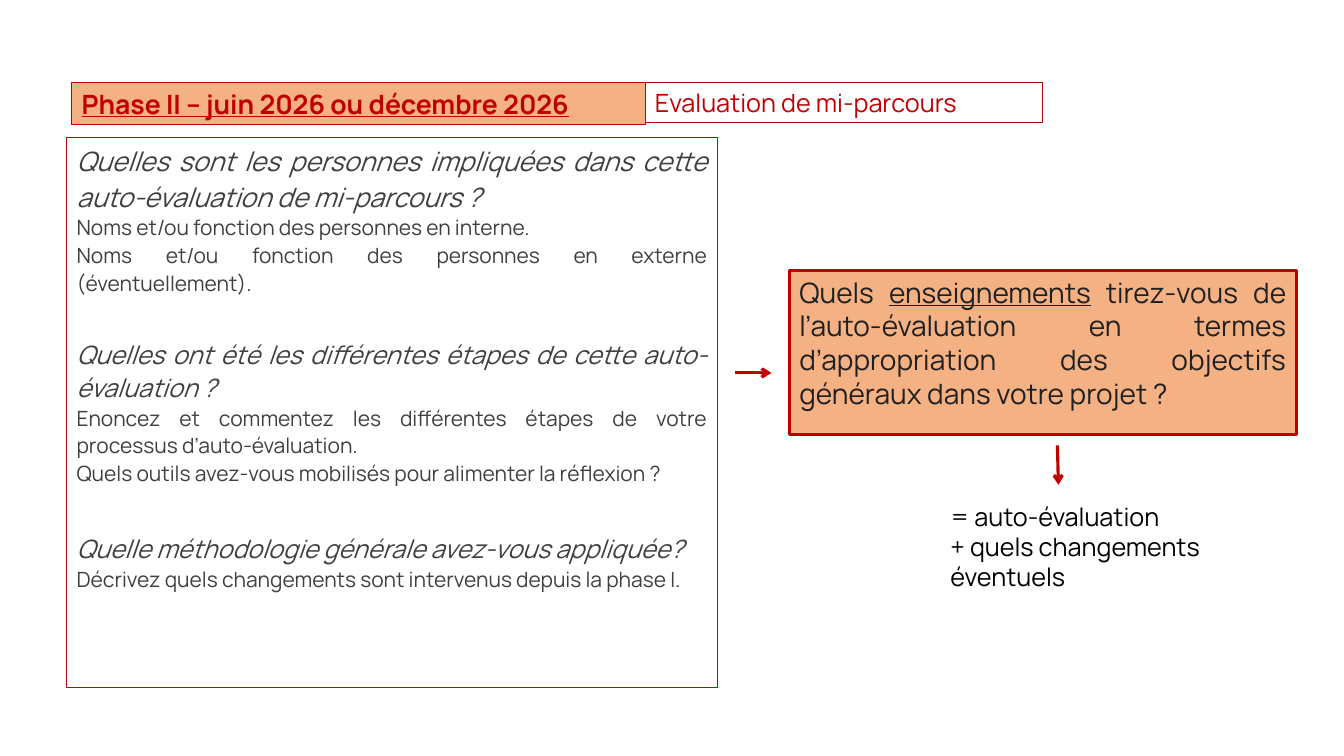
from lxml import etree
from pptx import Presentation
from pptx import util as u
from pptx.dml.color import RGBColor
from pptx.enum import shapes, text
from pptx.oxml import ns

Pt = u.Pt
RED = RGBColor(0xC0, 0x00, 0x00)
ORANGE = RGBColor(0xF4, 0xB1, 0x83)
GREY = RGBColor(0x40, 0x40, 0x40)
DARK = RGBColor(0x20, 0x20, 0x20)
BLACK = RGBColor(0x00, 0x00, 0x00)
FONT = "Manrope"
LEFT, JUSTIFY = text.PP_ALIGN.LEFT, text.PP_ALIGN.JUSTIFY

QUESTIONS = [
    (0, 19, "Quelles sont les personnes impliquées dans cette auto-évaluation de mi-parcours\u00a0?",
     ["Noms et/ou fonction des personnes en interne.",
      "Noms et/ou fonction des personnes en externe (éventuellement)."]),
    (29, 18, "Quelles ont été les différentes étapes de cette auto-évaluation\u00a0?",
     ["Enoncez et commentez les différentes étapes de votre processus d’auto-évaluation.",
      "Quels outils avez-vous mobilisés pour alimenter la réflexion\u00a0?"]),
    (32, 18, "Quelle méthodologie générale avez-vous appliquée?",
     ["Décrivez quels changements sont intervenus depuis la phase I."]),
]


def place(shape, box, fill=None, line_width=None):
    """Move a shape to its box, style its frame and return its text frame."""
    shape.left, shape.top, shape.width, shape.height = (Pt(value) for value in box)
    if fill is not None:
        shape.fill.solid()
        shape.fill.fore_color.rgb = fill
    if line_width:
        shape.line.color.rgb = RED
        shape.line.width = Pt(line_width)
    frame = shape.text_frame
    frame.word_wrap = True
    frame.auto_size = text.MSO_AUTO_SIZE.NONE
    frame.vertical_anchor = text.MSO_ANCHOR.TOP
    return frame


def write(frame, runs, size, color, align=LEFT, before=0, spacing=1.0, italic=False):
    """Add one unbulleted paragraph made of (text, bold, underline) runs."""
    paragraph = frame.paragraphs[0]
    if paragraph.runs:
        paragraph = frame.add_paragraph()
    properties = paragraph._p.get_or_add_pPr()
    properties.set("marL", "0")
    properties.set("indent", "0")
    etree.SubElement(properties, ns.qn("a:buNone"))
    paragraph.alignment = align
    paragraph.space_before = Pt(before)
    paragraph.line_spacing = spacing
    for words, bold, underline in runs:
        run = paragraph.add_run()
        run.text = words
        font = run.font
        font.name, font.size = FONT, Pt(size)
        font.bold, font.italic, font.underline = bold, italic, underline
        font.color.rgb = color


def add_heading(slide, box, phase_width):
    """Fill the band with the phase title and the name of the step beside it."""
    left, top, width, height = box
    title = place(slide.shapes.title, (left, top, phase_width, height), ORANGE, 0.75)
    write(title, [("Phase II – juin 2026 ou décembre 2026", True, True)], 19, RED)
    step_box = (left + phase_width, top, width - phase_width, height - 1.4)
    step = place(slide.shapes.add_textbox(0, 0, 0, 0), step_box, line_width=0.75)
    write(step, [("Evaluation de mi-parcours", False, False)], 18, RED)


def add_questions(slide, box):
    """List the questions and their guidance in the left body placeholder."""
    frame = place(slide.placeholders[1], box, line_width=0.75)
    for before, size, question, answers in QUESTIONS:
        write(frame, [(question, False, False)], size, GREY, JUSTIFY, before, 1.1, True)
        for answer in answers:
            write(frame, [(answer, False, False)], 15, GREY, JUSTIFY, 0, 1.1)


def add_lessons(slide, box):
    """Place the highlighted question and the outcome below it."""
    left, top, width, height = box
    frame = place(slide.placeholders[2], box, ORANGE, 2.25)
    write(frame, [
        ("Quels ", False, False),
        ("enseignements", False, True),
        (" tirez-vous de l’auto-évaluation en termes d’appropriation "
         "des objectifs généraux dans votre projet ?", False, False),
    ], 20, DARK, JUSTIFY)
    outcome_box = (left + 108, top + 161.2, 241.2, 72.7)
    outcome = place(slide.shapes.add_textbox(0, 0, 0, 0), outcome_box)
    for line in ("= auto-évaluation", "+ quels changements éventuels"):
        write(outcome, [(line, False, False)], 18, BLACK)
    bottom = top + height
    add_arrow(slide, (left + 191.5, bottom + 7.8), (left + 192.2, bottom + 35.9))


def add_arrow(slide, start, end):
    """Draw a red arrow from start to end."""
    arrow = slide.shapes.add_connector(
        shapes.MSO_CONNECTOR.STRAIGHT, *(Pt(value) for value in start + end))
    arrow.line.color.rgb = RED
    arrow.line.width = Pt(2.25)
    properties = arrow._element.spPr
    tail = etree.SubElement(properties.find(ns.qn("a:ln")), ns.qn("a:tailEnd"))
    tail.set("type", "arrow")
    etree.SubElement(properties, ns.qn("a:effectLst"))


def main():
    """Build the mid-term evaluation slide."""
    presentation = Presentation()
    presentation.slide_width, presentation.slide_height = Pt(960), Pt(540)
    slide = presentation.slides.add_slide(presentation.slide_layouts[3])
    add_heading(slide, (51.1, 59, 693.4, 30.2), 409.7)
    add_questions(slide, (47.5, 98, 465, 393))
    add_arrow(slide, (525, 266.4), (551, 266.4))
    add_lessons(slide, (563.8, 193, 362.2, 117.4))
    presentation.save("out.pptx")


if __name__ == "__main__":
    main()
